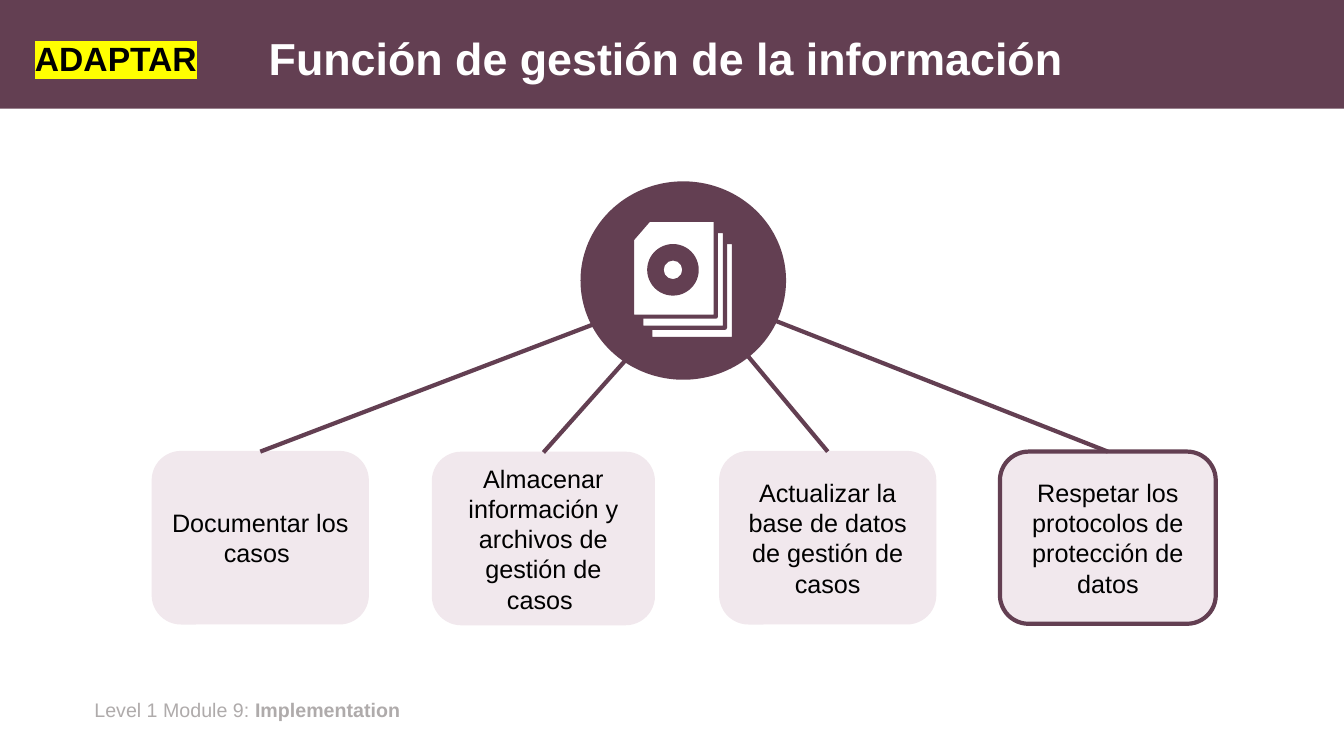
from lxml.etree import SubElement
from pptx import Presentation
from pptx.dml.color import RGBColor
from pptx.enum.shapes import MSO_CONNECTOR as Link, MSO_SHAPE as Shape
from pptx.enum.text import MSO_ANCHOR as Anchor, MSO_AUTO_SIZE as Fit, PP_ALIGN as Align
from pptx.oxml import parse_xml
from pptx.oxml.ns import nsdecls, qn
from pptx.util import Cm, Pt

COLORS = {
    "plum": "633F52",
    "blush": "F1E8ED",
    "white": "FFFFFF",
    "black": "000000",
    "gray": "AFABAB",
    "yellow": "FFFF00",
}


def color(name):
    return RGBColor.from_string(COLORS[name])


class SlideBuilder:
    font = "Arial"
    heavy = 3

    def __init__(self, page):
        self.page = page

    def format_text(self, frame, size, ink, align=Align.CENTER, bold=False, spacing=None):
        frame.word_wrap = True
        frame.vertical_anchor = Anchor.MIDDLE
        para = frame.paragraphs[0]
        para.alignment = align
        para.line_spacing = spacing
        for span in para.runs:
            span.font.name = self.font
            span.font.size = Pt(size)
            span.font.bold = bold
            span.font.color.rgb = color(ink)
        return para

    def title(self, text, place):
        title = self.page.shapes.title
        title.left, title.top, title.width, title.height = map(Cm, place)
        title.text_frame.text = text
        title.text_frame.auto_size = Fit.NONE
        self.format_text(title.text_frame, 32, "white", bold=True, spacing=0.9)
        return title

    def shape(self, kind, place, fill, line=None, weight=heavy, parent=None):
        shapes = (parent or self.page).shapes
        shape = shapes.add_shape(kind, *map(Cm, place))
        shape.shadow.inherit = False
        shape.fill.solid()
        shape.fill.fore_color.rgb = color(fill)
        if line:
            shape.line.color.rgb = color(line)
            shape.line.width = Pt(weight)
        else:
            shape.line.fill.background()
        return shape

    def task_box(self, text, place, line, weight):
        box = self.shape(Shape.ROUNDED_RECTANGLE, place, "blush", line, weight)
        box.text_frame.text = text
        self.format_text(box.text_frame, 18, "black")
        return box

    def spoke(self, box, hub):
        spoke = self.page.shapes.add_connector(Link.STRAIGHT, box.left, box.top, *map(Cm, hub))
        spoke.begin_connect(box, 0)
        spoke.line.color.rgb = color("plum")
        spoke.line.width = Pt(self.heavy)
        SubElement(spoke.element.spPr, qn("a:effectLst"))

    def records_icon(self):
        icon = self.page.shapes.add_group_shape()
        self.shape(Shape.OVAL, (14.63, 4.57, 5.18, 5), "plum", parent=icon)
        for step in (2, 1, 0):
            place = (15.93 + 0.23 * step, 5.54 + 0.28 * step, 2.11, 2.44)
            self.shape(Shape.FLOWCHART_CARD, place, "white", "plum", parent=icon)
        disc = self.shape(Shape.DONUT, (16.31, 6.15, 1.3, 1.3), "plum", parent=icon)
        disc.adjustments[0] = 0.32

    def label(self, text, place):
        box = self.page.shapes.add_textbox(*map(Cm, place))
        box.text_frame.text = text
        return box.text_frame

    def tag(self, text, place):
        frame = self.label(text, place)
        para = self.format_text(frame, 24, "black", bold=True, spacing=0.9)
        marker = parse_xml(
            f'<a:highlight {nsdecls("a")}><a:srgbClr val="{COLORS["yellow"]}"/></a:highlight>'
        )
        para.runs[0]._r.get_or_add_rPr().find(qn("a:solidFill")).addnext(marker)

    def footer(self, text, strong_text, place):
        frame = self.label(text, place)
        frame.auto_size = Fit.SHAPE_TO_FIT_TEXT
        frame.paragraphs[0].add_run().text = strong_text
        para = self.format_text(frame, 14, "gray", Align.LEFT)
        para.runs[1].font.bold = True


def main():
    deck = Presentation()
    deck.slide_width, deck.slide_height = Cm(33.87), Cm(19.05)
    builder = SlideBuilder(deck.slides.add_slide(deck.slide_layouts[5]))

    title = builder.title("Función de gestión de la información ", (2.34, 0.33, 29.21, 2.41))
    banner = builder.shape(Shape.RECTANGLE, (0, 0, 33.87, 2.74), "plum")
    title.element.addprevious(banner.element)
    builder.footer("Level 1 Module 9: ", "Implementation", (2.13, 17.45, 11.56, 0.86))

    tasks = [
        ("Documentar los casos ", 3.84, 11.38, 5.44, "blush", 1),
        ("Almacenar información y archivos de gestión de casos ", 10.9, 11.4, 5.59, "blush", 1),
        ("Actualizar la base de datos de gestión de casos", 18.14, 11.38, 5.44, "blush", 1),
        ("Respetar los protocolos de protección de datos", 25.2, 11.38, 5.44, "plum", 3),
    ]
    for text, left, top, width, line, weight in tasks:
        box = builder.task_box(text, (left, top, width, 4.34), line, weight)
        builder.spoke(box, (17.4, 7.24))

    builder.records_icon()
    builder.tag("ADAPTAR", (0.28, 0.33, 5.28, 2.41))
    deck.save("out.pptx")


if __name__ == "__main__":
    main()
